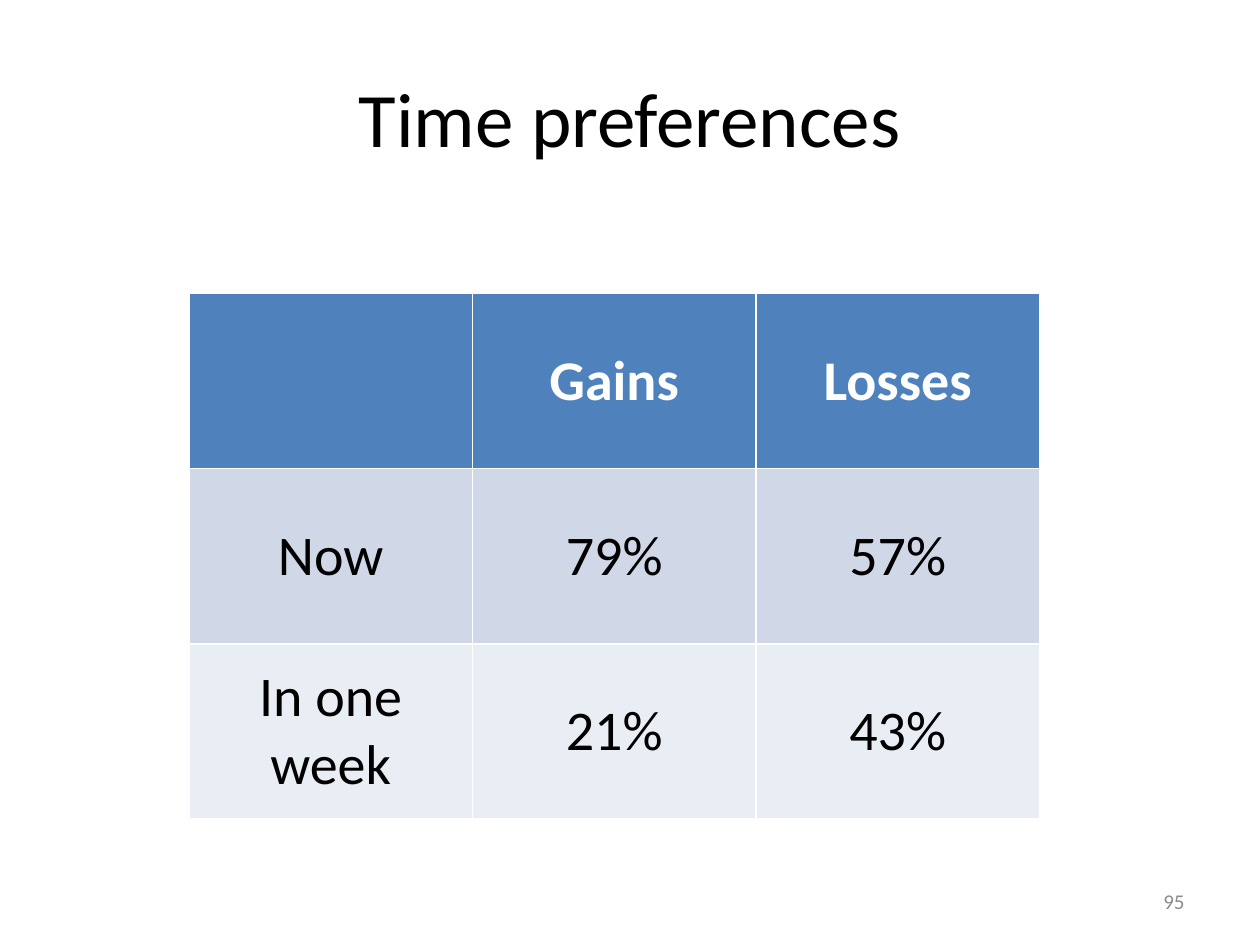
from pptx import Presentation
from pptx.dml.color import RGBColor
from pptx.enum import text
from pptx.util import Inches, Pt

BLACK = RGBColor(0x00, 0x00, 0x00)
WHITE = RGBColor(0xFF, 0xFF, 0xFF)
GREY = RGBColor(0x8C, 0x8C, 0x8C)
HEADER = RGBColor(0x4F, 0x81, 0xBD)
BANDS = [RGBColor(0xD0, 0xD8, 0xE8), RGBColor(0xE9, 0xED, 0xF4)]

ROWS = [
    ["", "Gains", "Losses"],
    ["Now", "79%", "57%"],
    ["In one week", "21%", "43%"],
]


def write(tf, words, size, color, align=text.PP_ALIGN.CENTER, bold=False):
    p = tf.paragraphs[0]
    p.alignment = align
    r = p.add_run()
    r.text = words
    r.font.color.rgb = color
    font_format = {"name": "Calibri", "size": Pt(size), "bold": bold}
    for name, value in font_format.items():
        setattr(r.font, name, value)


def add_label(s, box, words, size, color, align):
    tf = s.shapes.add_textbox(*box).text_frame
    frame_format = {"word_wrap": True, "vertical_anchor": text.MSO_ANCHOR.MIDDLE}
    for name, value in frame_format.items():
        setattr(tf, name, value)
    write(tf, words, size, color, align)


def add_preferences(s, box):
    table = s.shapes.add_table(len(ROWS), len(ROWS[0]), *box).table
    for i, row in enumerate(ROWS):
        header = i == 0
        fill = HEADER if header else BANDS[(i - 1) % 2]
        for j, words in enumerate(row):
            cell = table.cell(i, j)
            cell.fill.solid()
            cell.fill.fore_color.rgb = fill
            cell.vertical_anchor = text.MSO_ANCHOR.MIDDLE
            if words:
                write(cell.text_frame, words, 32,
                      WHITE if header else BLACK, bold=header)


def main():
    prs = Presentation()
    prs.slide_width, prs.slide_height = Inches(10), Inches(7.5)
    s = prs.slides.add_slide(prs.slide_layouts[6])
    title_box = [Inches(v) for v in (0.5, 0.3, 9, 1.25)]
    number_box = [Inches(v) for v in (7.17, 6.95, 2.33, 0.4)]
    table_box = [Inches(v) for v in (1.5, 2.33, 6.75, 4.17)]
    add_label(s, title_box, "Time preferences", 44, BLACK, text.PP_ALIGN.CENTER)
    add_label(s, number_box, "95", 12, GREY, text.PP_ALIGN.RIGHT)
    add_preferences(s, table_box)
    prs.save("out.pptx")


if __name__ == "__main__":
    main()
